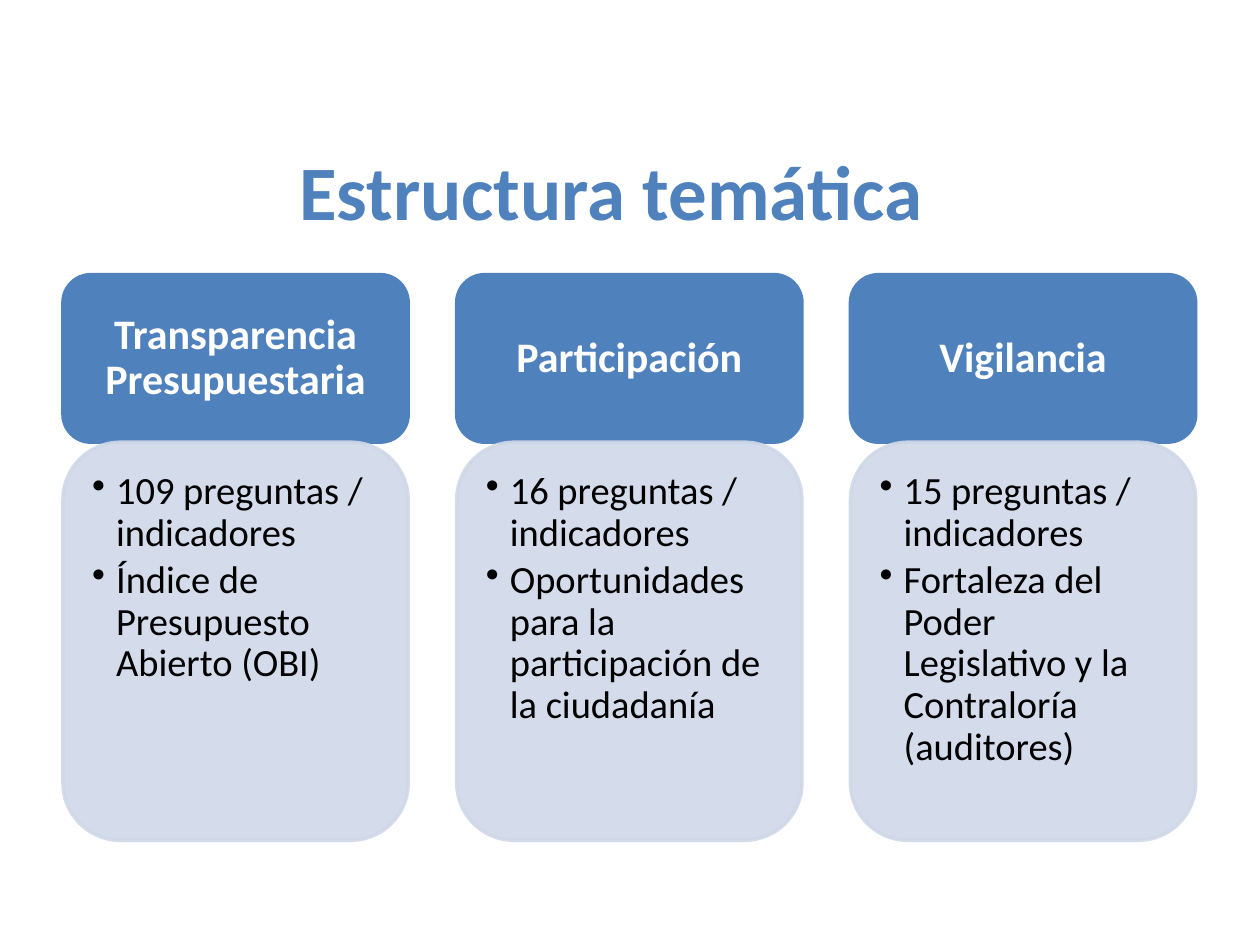
import pptx
import pptx.util
import pptx.dml.color
import pptx.enum.shapes
import pptx.enum.text
import pptx.oxml.ns
from lxml import etree

Inches, Pt = pptx.util.Inches, pptx.util.Pt
ALIGN = pptx.enum.text.PP_ALIGN
ANCHOR = pptx.enum.text.MSO_ANCHOR
qn = pptx.oxml.ns.qn


def color(hex_string):
    return pptx.dml.color.RGBColor.from_string(hex_string)


def add_alpha(fill_parent, percent):
    for solid in fill_parent.iter(qn("a:solidFill")):
        etree.SubElement(solid[0], qn("a:alpha"), val=str(percent * 1000))


class ThemeSlide:
    FONT = "Calibri"
    ACCENT, PALE, WHITE, BLACK = "4F81BD", "D0D8E8", "FFFFFF", "000000"
    # Column grid
    LEFT, WIDTH, PITCH = 0.5, 2.74, 3.125
    HEADER_TOP, HEADER_HEIGHT = 2.18, 1.33
    BODY_HEIGHT = 3.16
    INDENT = 0.19

    def __init__(self, presentation):
        self.slide = presentation.slides.add_slide(presentation.slide_layouts[5])

    def style_font(self, paragraph, size, hex_string, bold=False):
        font = paragraph.font
        font.name, font.size, font.bold = self.FONT, Pt(size), bold
        font.color.rgb = color(hex_string)

    def title(self, text):
        title = self.slide.shapes.title
        title.left, title.top = Inches(0.35), Inches(1.07)
        title.width, title.height = Inches(9), Inches(0.87)
        frame = title.text_frame
        frame.text = text
        frame.vertical_anchor = ANCHOR.MIDDLE
        frame.paragraphs[0].alignment = ALIGN.CENTER
        self.style_font(frame.paragraphs[0], 44, self.ACCENT, True)

    def box(self, column, top, height, fill, margins, anchor):
        shape = self.slide.shapes.add_shape(
            pptx.enum.shapes.MSO_SHAPE.ROUNDED_RECTANGLE,
            Inches(self.LEFT + column * self.PITCH), Inches(top),
            Inches(self.WIDTH), Inches(height))
        shape.shadow.inherit = False
        shape.fill.solid()
        shape.fill.fore_color.rgb = color(fill)
        shape.line.color.rgb = color(fill)
        shape.line.width = Pt(2)
        frame = shape.text_frame
        frame.word_wrap = True
        frame.vertical_anchor = anchor
        (frame.margin_left, frame.margin_top,
         frame.margin_right, frame.margin_bottom) = map(Inches, margins)
        return shape

    def header(self, column, text):
        shape = self.box(column, self.HEADER_TOP, self.HEADER_HEIGHT, self.ACCENT,
                         (0.14, 0.08, 0.14, 0.08), ANCHOR.MIDDLE)
        paragraph = shape.text_frame.paragraphs[0]
        paragraph.text = text
        paragraph.alignment = ALIGN.CENTER
        paragraph.line_spacing = 0.9
        self.style_font(paragraph, 24, self.WHITE, True)

    def bullet_list(self, column, items):
        shape = self.box(column, self.HEADER_TOP + self.HEADER_HEIGHT,
                         self.BODY_HEIGHT, self.PALE,
                         (0.1, 0.1, 0.14, 0.16), ANCHOR.TOP)
        add_alpha(shape.fill._xPr, 90)
        frame = shape.text_frame
        for index, item in enumerate(items):
            paragraph = frame.add_paragraph() if index else frame.paragraphs[0]
            paragraph.text = item
            paragraph.level = 1
            paragraph.alignment = ALIGN.LEFT
            paragraph.line_spacing = 0.9
            paragraph.space_after = Pt(3.3)
            properties = paragraph._p.get_or_add_pPr()
            properties.set("marL", str(Inches(self.INDENT)))
            properties.set("indent", str(-Inches(self.INDENT)))
            etree.SubElement(properties, qn("a:buChar"), char="•")
            self.style_font(paragraph, 22, self.BLACK)


def main():
    presentation = pptx.Presentation()
    presentation.slide_width, presentation.slide_height = Inches(10), Inches(7.5)
    page = ThemeSlide(presentation)
    page.title("Estructura temática")

    # One column per theme: header above its list
    themes = [
        ("Transparencia Presupuestaria",
         ["109 preguntas / indicadores", "Índice de Presupuesto Abierto (OBI)"]),
        ("Participación",
         ["16 preguntas / indicadores",
          "Oportunidades para la participación de la ciudadanía"]),
        ("Vigilancia",
         ["15 preguntas / indicadores",
          "Fortaleza del Poder Legislativo y la Contraloría (auditores)"]),
    ]
    for column, (heading, items) in enumerate(themes):
        page.header(column, heading)
        page.bullet_list(column, items)

    presentation.save("out.pptx")


if __name__ == "__main__":
    main()
